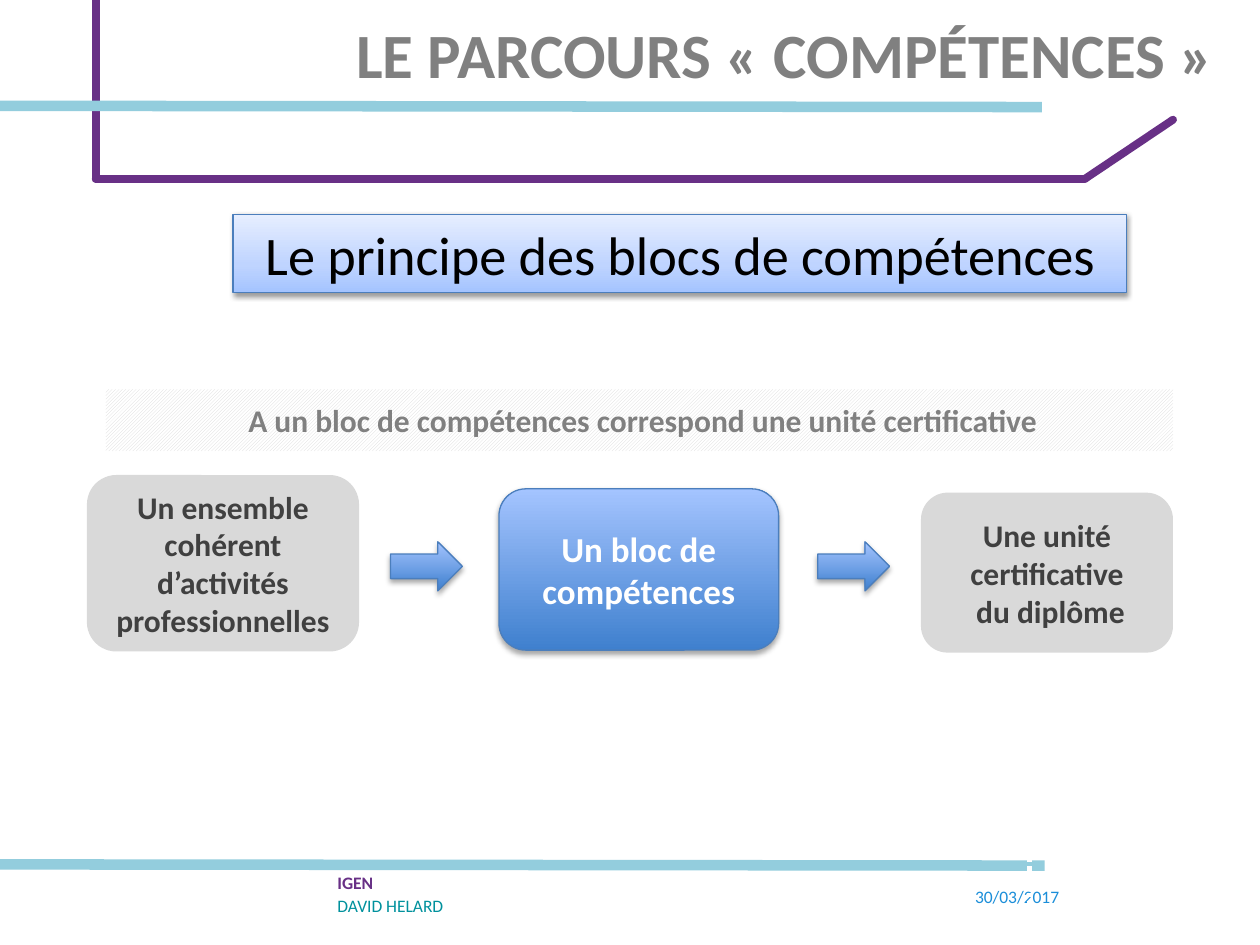
"""Build the slide on the principle of competence blocks."""
import pptx
import pptx.util
import pptx.dml.color
import pptx.enum.dml
import pptx.enum.shapes
import pptx.enum.text
import pptx.oxml
import pptx.oxml.ns

RGB = pptx.dml.color.RGBColor
PURPLE, TEAL, SKY = RGB(0x68, 0x30, 0x86), RGB(0, 0x91, 0x9D), RGB(0x93, 0xCD, 0xDD)
WHITE, BLACK, SILVER = RGB(255, 255, 255), RGB(0, 0, 0), RGB(0xD9, 0xD9, 0xD9)
GREY, CHARCOAL = RGB(0x80, 0x80, 0x80), RGB(0x40, 0x40, 0x40)
DATE_BLUE, EDGE = RGB(0x1B, 0x8E, 0xD9), RGB(0x4B, 0x7E, 0xBC)
DEEP, SOFT = RGB(0x3F, 0x80, 0xCE), RGB(0xA4, 0xC4, 0xFF)
PALE, ICE = RGB(0xBF, 0xD4, 0xFF), RGB(0xE6, 0xEE, 0xFF)

SHAPE = pptx.enum.shapes.MSO_SHAPE
ALIGN = pptx.enum.text.PP_ALIGN
DOTTED = pptx.enum.dml.MSO_LINE.ROUND_DOT
UPWARD = pptx.enum.dml.MSO_PATTERN.LIGHT_UPWARD_DIAGONAL
WIDTH, HEIGHT = pptx.util.Inches(10), pptx.util.Inches(7.5)

# Places are percentages of the slide: left, top, width, height or start and end points.
FRAME_LINES = [
    (7.6, 18.93, 86.1, 18.93), (86.1, 18.93, 93.1, 12.67), (7.6, 18.93, 7.6, 0),
]
RULES = [
    ((0, 91.47, 82.9, 91.6), SKY, 6, None),
    ((0, 11.2, 82.7, 11.33), SKY, 6, None),
    ((81.7, 60.27, 81.7, 100), WHITE, 2.5, DOTTED),
]
TITLE = [("LE PARCOURS «\u00a0COMPÉTENCES\u00a0»", dict(size=36, bold=True, color=GREY))]
DATE = [("30/03/2017", dict(size=10, color=DATE_BLUE))]
AUTHOR = [
    ("IGEN", dict(size=10, bold=True, color=PURPLE)),
    ("DAVID HELARD", dict(size=10, color=TEAL)),
]
TEXTS = [
    ((76.4, 92.13, 12.7, 5.33), DATE, ALIGN.LEFT, 13.2),
    ((25.8, 89.6, 34.1, 9.87), AUTHOR, ALIGN.LEFT, 13.2),
    ((2, 0, 95.3, 11.33), TITLE, ALIGN.RIGHT, None),
]

CARD_TEXT = dict(size=18, bold=True, color=CHARCOAL)
BAND = [(" A un bloc de compétences correspond une unité certificative",
         dict(size=18, bold=True, color=GREY))]
UNIT = [("Une unité certificative", CARD_TEXT), (" du diplôme", CARD_TEXT)]
BLOCK = [("Un bloc de compétences", dict(size=20, bold=True, color=WHITE))]
ACTIVITIES = [("Un ensemble cohérent d’activités professionnelles", CARD_TEXT)]
BANNER = [("Le principe des blocs de compétences", dict(size=31, color=BLACK))]

VIVID = dict(stops=[(0, DEEP), (100, SOFT)], alpha=35, distance=1.8)
LIGHT = dict(stops=[(0, SOFT), (35, PALE), (100, ICE)], alpha=38, distance=1.6)
SHAPES = [
    (SHAPE.RECTANGLE, (8.4, 41.2, 84.7, 6.53), "hatch", BAND),
    (SHAPE.ROUNDED_RECTANGLE, (73.1, 52.13, 20, 16.93), "plain", UNIT),
    (SHAPE.ROUNDED_RECTANGLE, (39.6, 51.73, 22.2, 17.07), VIVID, BLOCK),
    (SHAPE.ROUNDED_RECTANGLE, (6.9, 50.27, 21.6, 18.67), "plain", ACTIVITIES),
    *[(SHAPE.RIGHT_ARROW, (left, 57.33, 5.7, 5.2), VIVID, []) for left in (31, 64.9)],
    (SHAPE.RECTANGLE, (18.5, 22.67, 70.9, 8.27), LIGHT, BANNER),
]


def place(shares):
    """Turn alternating width and height percentages into lengths."""
    return [round(side * share / 100) for share, side in zip(shares, (WIDTH, HEIGHT) * 2)]


def drawing(markup):
    """Parse one DrawingML element."""
    head, rest = markup.split(" ", 1)
    return pptx.oxml.parse_xml(f"{head} {pptx.oxml.ns.nsdecls('a')} {rest}")


def add_line(page, points, color, weight, dash=None, cap="flat"):
    """Draw a straight line without shadow."""
    rule = page.shapes.add_connector(pptx.enum.shapes.MSO_CONNECTOR.STRAIGHT, *place(points))
    rule.line.color.rgb = color
    rule.line.width = pptx.util.Pt(weight)
    if dash:
        rule.line.dash_style = dash
    properties = rule._element.spPr
    properties.get_or_add_ln().set("cap", cap)
    properties.append(drawing("<a:effectLst />"))


def write(box, lines, align, spacing=None):
    """Fill a box with one paragraph per line."""
    frame = box.text_frame
    frame.word_wrap = True
    frame.vertical_anchor = pptx.enum.text.MSO_ANCHOR.MIDDLE
    for index, (text, style) in enumerate(lines):
        para = frame.add_paragraph() if index else frame.paragraphs[0]
        para.alignment = align
        if spacing:
            para.line_spacing = pptx.util.Pt(spacing)
        span = para.add_run()
        span.text = text
        values = dict(name="Calibri", size=pptx.util.Pt(style["size"]),
                      bold=style.get("bold", False))
        for key, value in values.items():
            setattr(span.font, key, value)
        span.font.color.rgb = style["color"]


def add_gloss(shape, stops, alpha, distance):
    """Give a shape an upward gradient, a thin edge and a soft drop shadow."""
    shape.fill.gradient()
    shape.fill.gradient_angle = 90
    properties = shape._element.spPr
    stop_list = properties.find(".//" + pptx.oxml.ns.qn("a:gsLst"))
    stop_list[:] = [
        drawing(f'<a:gs pos="{position * 1000}"><a:srgbClr val="{color}"/></a:gs>')
        for position, color in stops
    ]
    shape.line.color.rgb = EDGE
    shape.line.width = pptx.util.Pt(0.75)
    properties.find(pptx.oxml.ns.qn("a:effectLst")).append(drawing(
        f'<a:outerShdw blurRad="{pptx.util.Pt(3.1)}" dist="{pptx.util.Pt(distance)}" '
        f'dir="5400000" rotWithShape="0"><a:srgbClr val="{BLACK}">'
        f'<a:alpha val="{alpha * 1000}"/></a:srgbClr></a:outerShdw>'))


def add_shape(page, kind, shares, finish, lines):
    """Add a preset shape with its finish and centred text."""
    shape = page.shapes.add_shape(kind, *place(shares))
    shape.shadow.inherit = False
    if isinstance(finish, dict):
        add_gloss(shape, **finish)
    else:
        shape.line.fill.background()
        if finish == "hatch":
            shape.fill.patterned()
            shape.fill.pattern = UPWARD
            shape.fill.fore_color.rgb = SILVER
            shape.fill.back_color.rgb = WHITE
        else:
            shape.fill.solid()
            shape.fill.fore_color.rgb = SILVER
    write(shape, lines, ALIGN.CENTER)


def main():
    """Assemble and save the deck."""
    deck = pptx.Presentation()
    deck.slide_width, deck.slide_height = WIDTH, HEIGHT
    page = deck.slides.add_slide(deck.slide_layouts[6])
    for points in FRAME_LINES:
        add_line(page, points, PURPLE, 4.5, cap="rnd")
    for shares, lines, align, spacing in TEXTS:
        write(page.shapes.add_textbox(*place(shares)), lines, align, spacing)
    for rule in RULES:
        add_line(page, *rule)
    for item in SHAPES:
        add_shape(page, *item)
    deck.save("out.pptx")


if __name__ == "__main__":
    main()
